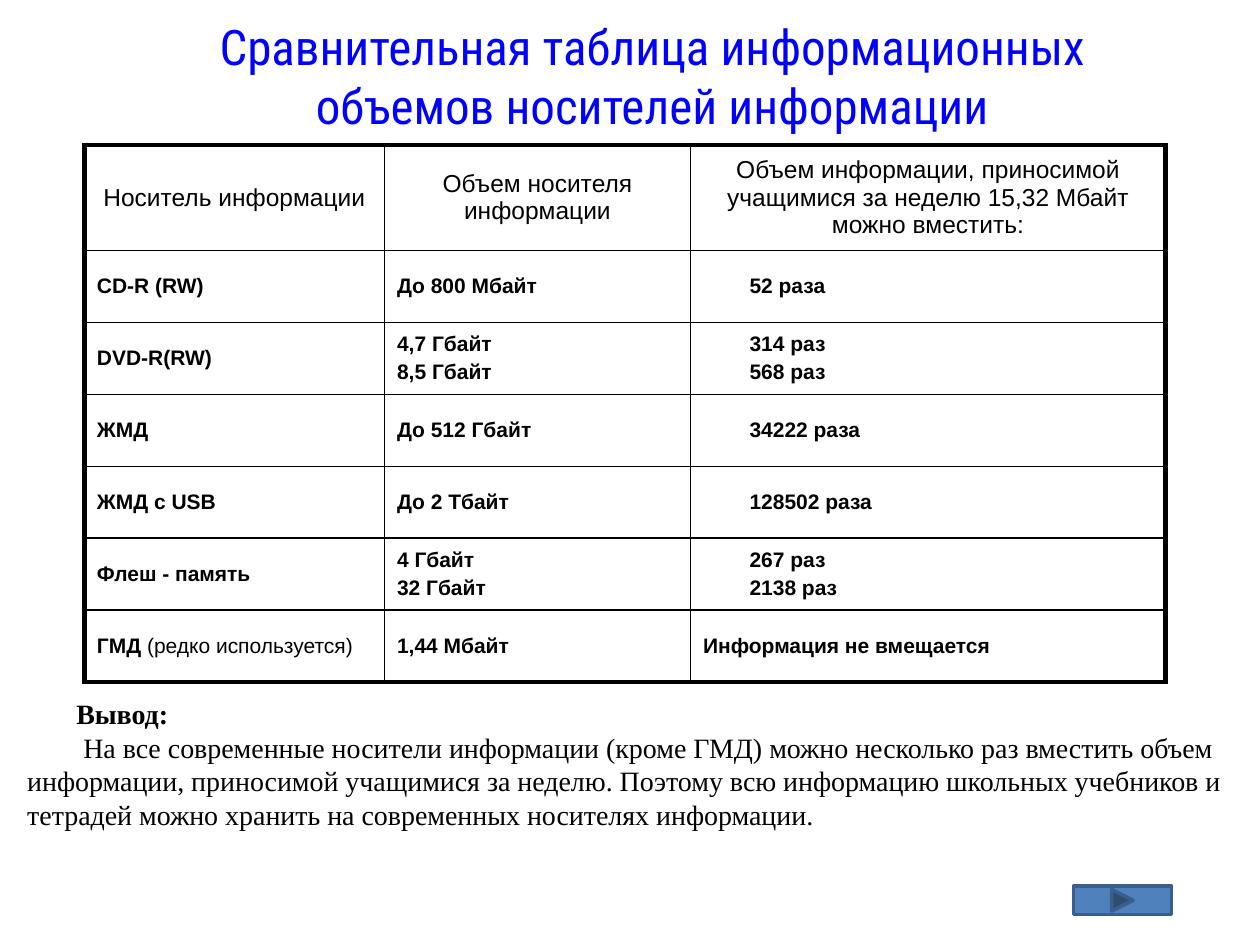
from lxml.etree import SubElement
from pptx import Presentation
from pptx.dml.color import RGBColor
from pptx.enum.shapes import MSO_SHAPE
from pptx.enum.text import MSO_ANCHOR, MSO_AUTO_SIZE, PP_ALIGN
from pptx.oxml.ns import qn
from pptx.util import Cm, Pt

HEADERS = [
    "Носитель информации",
    "Объем носителя информации",
    "Объем информации, приносимой учащимися за неделю 15,32 Мбайт можно вместить:",
]
ROWS = [
    ["CD-R (RW)", "До 800 Мбайт", "52 раза"],
    ["DVD-R(RW)", "4,7 Гбайт\n8,5 Гбайт", "314 раз\n568 раз"],
    ["ЖМД", "До 512 Гбайт", "34222 раза"],
    ["ЖМД с USB", "До 2 Тбайт", "128502 раза"],
    ["Флеш - память", "4 Гбайт\n32 Гбайт", "267 раз\n2138 раз"],
    ["ГМД ", "1,44 Мбайт", "Информация не вмещается"],
]
COL_WIDTHS = [6.05, 6.17, 9.58]
HEADER_HEIGHT, ROW_HEIGHT = 2.13, 1.45
THICK, THIN = 3, 1


def rgb(value):
    return RGBColor.from_string(value)


def format_run(r, font, size, color="000000", bold=False):
    r.font.name = font
    r.font.size = Pt(size)
    r.font.bold = bold
    r.font.color.rgb = rgb(color)


def add_title(s, left, top, width, height):
    sp = s.shapes.title
    sp.left, sp.top, sp.width, sp.height = Cm(left), Cm(top), Cm(width), Cm(height)
    tf = sp.text_frame
    tf.text = "Сравнительная таблица информационных\nобъемов носителей информации"
    tf.word_wrap = False
    tf.auto_size = MSO_AUTO_SIZE.NONE
    tf.vertical_anchor = MSO_ANCHOR.MIDDLE
    for p in tf.paragraphs:
        p.alignment = PP_ALIGN.CENTER
        format_run(p.runs[0], "Roboto Condensed", 28, "0000FF")


def set_borders(cell, widths):
    tcPr = cell._tc.get_or_add_tcPr()
    for i, (side, width) in enumerate(widths.items()):
        ln = SubElement(tcPr, qn(f"a:ln{side}"), w=str(Pt(width)))
        fill = SubElement(ln, qn("a:solidFill"))
        SubElement(fill, qn("a:srgbClr"), val="000000")
        tcPr.insert(i, ln)


def fill_cell(cell, text, header):
    size = 14 if header else 12
    cell.text_frame.text = text
    cell.vertical_anchor = MSO_ANCHOR.MIDDLE
    cell.fill.background()
    for p in cell.text_frame.paragraphs:
        p.alignment = PP_ALIGN.CENTER if header else PP_ALIGN.LEFT
        p.space_before = Pt(size * 0.2)
        format_run(p.runs[0], "Arial", size, bold=not header)


def add_media_table(s, left, top):
    data = [HEADERS] + ROWS
    last_row, last_col = len(data) - 1, len(HEADERS) - 1
    height = HEADER_HEIGHT + ROW_HEIGHT * len(ROWS)
    table = s.shapes.add_table(len(data), len(HEADERS), Cm(left), Cm(top),
                               Cm(sum(COL_WIDTHS)), Cm(height)).table
    table.first_row = table.horz_banding = False
    for col, width in zip(table.columns, COL_WIDTHS):
        col.width = Cm(width)
    for i, texts in enumerate(data):
        table.rows[i].height = Cm(ROW_HEIGHT if i else HEADER_HEIGHT)
        for j, text in enumerate(texts):
            cell = table.cell(i, j)
            fill_cell(cell, text, header=i == 0)
            if j == last_col and 0 < i < last_row:
                cell.margin_left = Cm(1.19)
            set_borders(cell, {
                "L": THICK if j == 0 else THIN,
                "R": THICK if j == last_col else THIN,
                "T": THICK if i == 0 else THIN,
                "B": THICK if i == last_row else THIN,
            })
    r = table.cell(last_row, 0).text_frame.paragraphs[0].add_run()
    r.text = "(редко используется)"
    format_run(r, "Arial", 12)


def add_conclusion(s, left, top, width, height):
    tf = s.shapes.add_textbox(Cm(left), Cm(top), Cm(width), Cm(height)).text_frame
    tf.word_wrap = True
    tf.text = (
        "Вывод:\n"
        "На все современные носители информации (кроме ГМД) можно несколько раз "
        "вместить объем информации, приносимой учащимися за неделю. Поэтому всю "
        "информацию школьных учебников и тетрадей можно хранить на современных "
        "носителях информации."
    )
    for p, indent, bold in zip(tf.paragraphs, (0.99, 1.13), (True, False)):
        p._p.get_or_add_pPr().set("indent", str(Cm(indent)))
        format_run(p.runs[0], "Times New Roman", 16, bold=bold)


def add_next_button(s, left, top, width, height):
    sp = s.shapes.add_shape(MSO_SHAPE.ACTION_BUTTON_FORWARD_OR_NEXT,
                            Cm(left), Cm(top), Cm(width), Cm(height))
    sp.shadow.inherit = False
    sp.fill.solid()
    sp.fill.fore_color.rgb = rgb("4F81BD")
    sp.line.color.rgb = rgb("3A5F8C")
    sp.line.width = Pt(2)


def main():
    prs = Presentation()
    prs.slide_width, prs.slide_height = Cm(25.4), Cm(19.05)
    s = prs.slides.add_slide(prs.slide_layouts[5])
    add_title(s, 3.58, 0.33, 19.13, 2.39)
    add_media_table(s, 1.7, 2.92)
    add_conclusion(s, 0.3, 13.92, 24.61, 2.97)
    add_next_button(s, 21.64, 17.86, 1.98, 0.58)
    prs.save("out.pptx")


if __name__ == "__main__":
    main()
